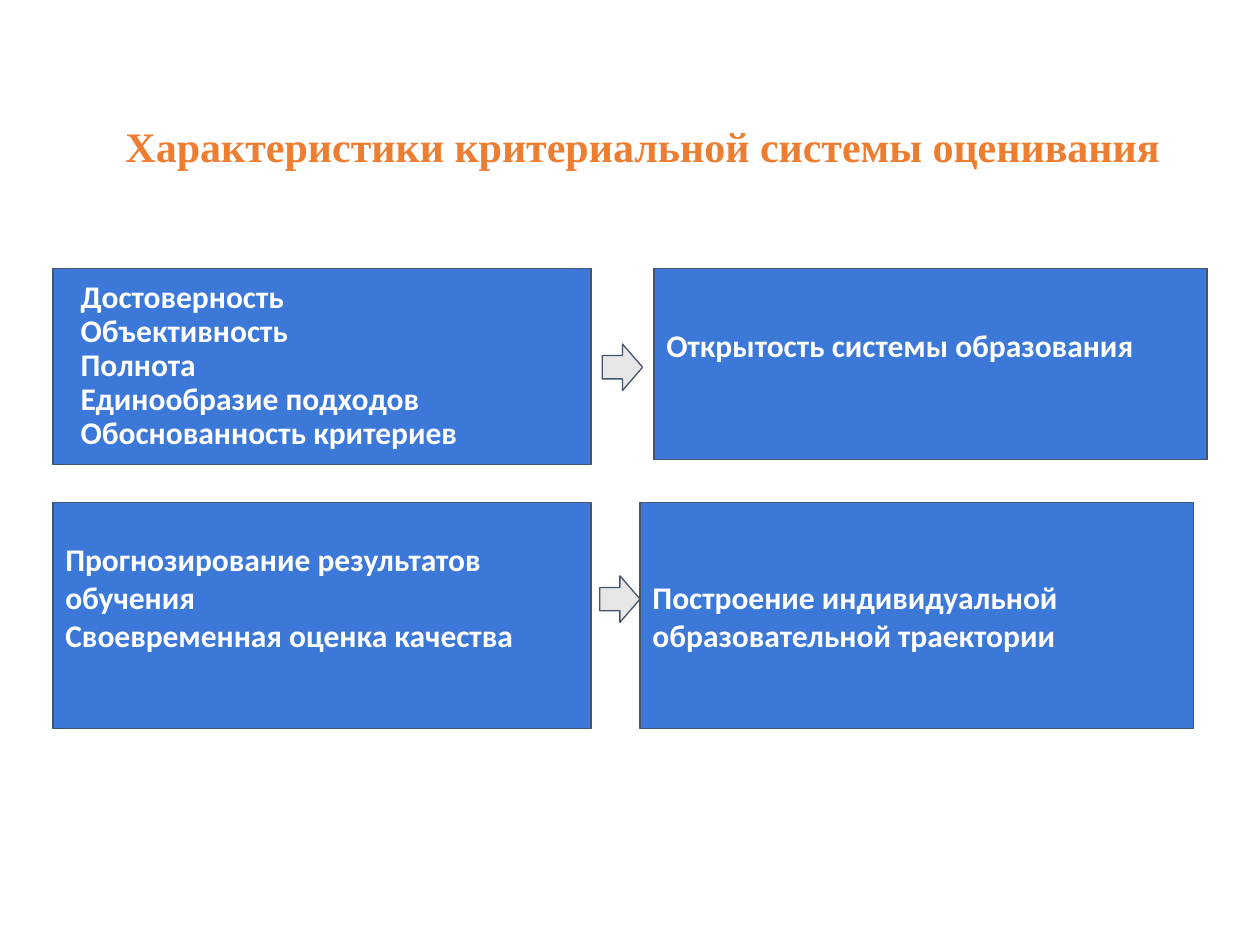
from dataclasses import dataclass

from pptx import Presentation
from pptx.dml.color import RGBColor
from pptx.enum.shapes import MSO_SHAPE
from pptx.enum.text import MSO_ANCHOR, PP_ALIGN
from pptx.slide import Slide
from pptx.util import Inches, Pt

ORANGE = RGBColor(0xED, 0x7D, 0x31)
BLUE = RGBColor(0x3C, 0x78, 0xD8)
SLATE = RGBColor(0x44, 0x54, 0x6A)
GREY = RGBColor(0xE7, 0xE6, 0xE6)
WHITE = RGBColor(0xFF, 0xFF, 0xFF)

CELL = Inches(0.1)


@dataclass
class Board:
    page: Slide
    title_font: str = "Times New Roman"
    body_font: str = "Calibri"
    title_size: int = 24
    body_size: int = 18
    margin: float = 1

    def place(self, column, row, columns, rows):
        return [round(length * CELL) for length in (column, row, columns, rows)]

    def add_lines(self, box, lines, font, size, color, align=PP_ALIGN.LEFT,
                  anchor=MSO_ANCHOR.MIDDLE, spacing=1.0, indent=0, lift=0):
        frame = box.text_frame
        frame.word_wrap = True
        frame.vertical_anchor = anchor
        frame.margin_top = frame.margin_right = round(self.margin * CELL)
        frame.margin_left = round((self.margin + indent) * CELL)
        frame.margin_bottom = round((self.margin + lift) * CELL)
        for index, line in enumerate(lines):
            para = frame.add_paragraph() if index else frame.paragraphs[0]
            para.alignment = align
            para.line_spacing = spacing
            span = para.add_run()
            span.text = line
            span.font.name = font
            span.font.size = Pt(size)
            span.font.bold = True
            span.font.color.rgb = color

    def shape(self, kind, area, fill):
        shape = self.page.shapes.add_shape(kind, *self.place(*area))
        shape.shadow.inherit = False
        shape.fill.solid()
        shape.fill.fore_color.rgb = fill
        shape.line.color.rgb = SLATE
        shape.line.width = Pt(0.75)
        return shape

    def title(self, area, text):
        box = self.page.shapes.add_textbox(*self.place(*area))
        self.add_lines(box, [text], self.title_font, self.title_size, ORANGE,
                       align=PP_ALIGN.CENTER, anchor=MSO_ANCHOR.TOP, spacing=0.9)

    def panel(self, area, lines, **layout):
        box = self.shape(MSO_SHAPE.RECTANGLE, area, BLUE)
        self.add_lines(box, lines, self.body_font, self.body_size, WHITE, **layout)

    def arrow(self, column, row):
        self.shape(MSO_SHAPE.RIGHT_ARROW, (column, row, 3.2, 3.7), GREY)


def main():
    deck = Presentation()
    deck.slide_width, deck.slide_height = 100 * CELL, 75 * CELL
    board = Board(deck.slides.add_slide(deck.slide_layouts[6]))

    left, left_width, right_width = 4.2, 42.7, 43.9
    top, bottom, bottom_height = 21.3, 39.9, 17.9
    blank_line = 3

    board.title((4.4, 9, 93.2, 6.3), "Характеристики критериальной системы оценивания")
    board.panel((left, top, left_width, 15.6),
                ["Достоверность", "Объективность", "Полнота",
                 "Единообразие подходов", "Обоснованность критериев"],
                anchor=MSO_ANCHOR.TOP, spacing=0.9, indent=1.2)
    board.panel((51.9, top, right_width, 15.2),
                ["Открытость системы образования"], lift=blank_line)
    board.panel((left, bottom, left_width, bottom_height),
                ["Прогнозирование результатов обучения",
                 "Своевременная оценка качества"], lift=blank_line)
    board.panel((50.8, bottom, right_width, bottom_height),
                ["Построение индивидуальной образовательной траектории"])
    board.arrow(47.8, 27.3)
    board.arrow(47.6, 45.7)

    deck.save("out.pptx")


if __name__ == "__main__":
    main()
